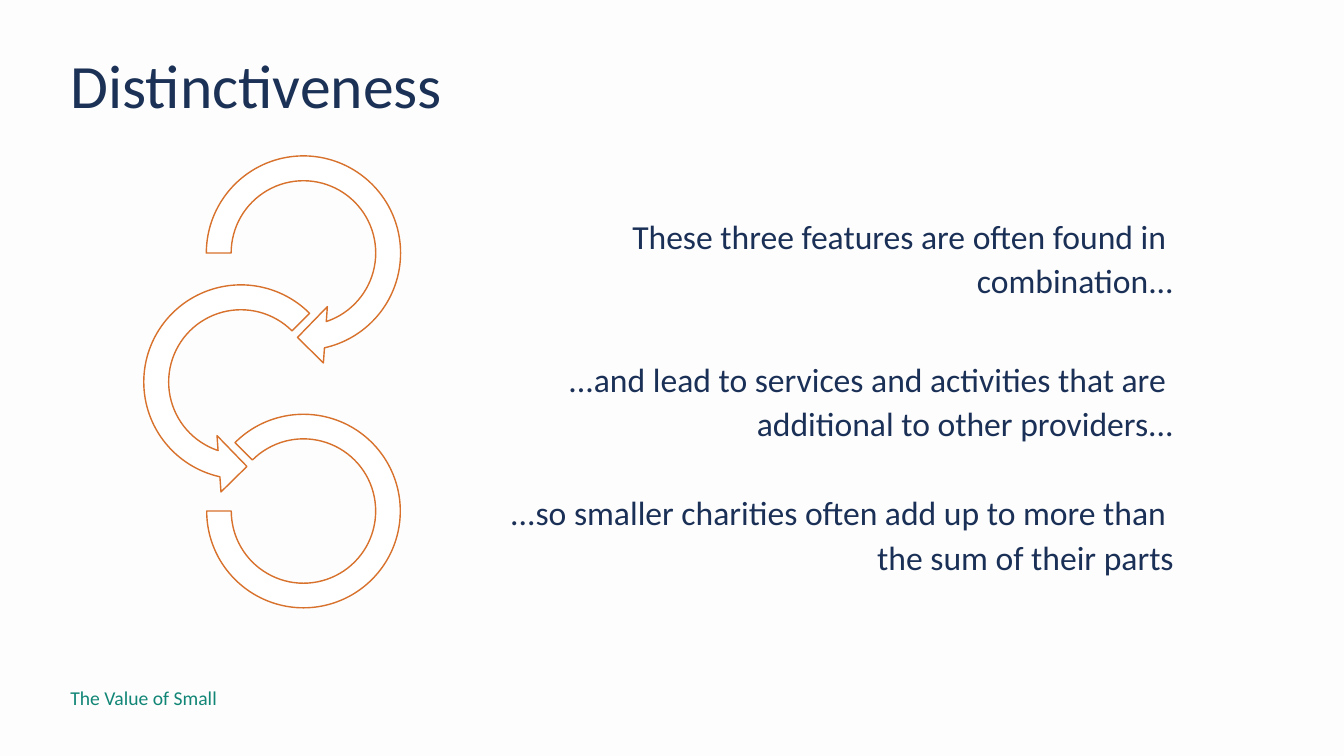
import pptx
import pptx.util
import pptx.oxml
import pptx.oxml.ns
from pptx.dml.color import RGBColor
from pptx.enum.shapes import MSO_SHAPE
from pptx.enum.text import PP_ALIGN
from pptx.util import Inches, Pt

NAVY = RGBColor(0x1C, 0x31, 0x56)
BODY_NAVY = RGBColor(0x1B, 0x30, 0x56)
GREEN = RGBColor(0x12, 0x86, 0x76)
ORANGE = RGBColor(0xD7, 0x71, 0x2C)
WHITE = RGBColor(0xFF, 0xFF, 0xFF)
GREY = RGBColor(0xDB, 0xDB, 0xDB)

STATEMENTS = [
    "These three features are often found in \vcombination...",
    "...and lead to services and activities that are \vadditional to other providers...",
    "...so smaller charities often add up to more than \vthe sum of their parts",
]
STATEMENT_GAPS = [0, 39, 32]

# preset, left, top, size, adjustments
CHAIN = [
    (MSO_SHAPE.CIRCULAR_ARROW, 1.89, 1.39, 2.24, (0.11, 11.423, 45, 108, 0.125)),
    (MSO_SHAPE.LEFT_CIRCULAR_ARROW, 1.27, 2.67, 2.24, (0.11, 11.423, 63, 189, 0.125)),
    (MSO_SHAPE.BLOCK_ARC, 2.05, 4.11, 1.92, (135, 108, 0.127)),
]


def add_text(slide, paragraphs, left, top, width, height, *, size, color,
             align=PP_ALIGN.LEFT, line_spacing=0.9, gaps=(0,)):
    """Add a text box; gaps holds the points before each paragraph."""
    frame = slide.shapes.add_textbox(
        Inches(left), Inches(top), Inches(width), Inches(height)).text_frame
    frame.word_wrap = True
    for index, (text, gap) in enumerate(zip(paragraphs, gaps)):
        paragraph = frame.add_paragraph() if index else frame.paragraphs[0]
        paragraph.text = text
        paragraph.alignment = align
        paragraph.line_spacing = line_spacing
        paragraph.space_before = Pt(gap)
        paragraph.font.name = "Calibri"
        paragraph.font.size = Pt(size)
        paragraph.font.color.rgb = color


def add_tint(slide, width, height):
    """Cover the slide with a 5% grey wash."""
    tint = slide.shapes.add_shape(MSO_SHAPE.RECTANGLE, 0, 0, width, height)
    tint.shadow.inherit = False
    tint.line.fill.background()
    tint.fill.solid()
    tint.fill.fore_color.rgb = GREY
    grey = tint.fill._xPr.find(".//" + pptx.oxml.ns.qn("a:srgbClr"))
    alpha = pptx.oxml.parse_xml(
        f'<a:alpha {pptx.oxml.ns.nsdecls("a")} val="5000"/>')
    grey.append(alpha)


def add_chain(slide):
    chain = slide.shapes.add_group_shape()
    for preset, left, top, size, adjustments in CHAIN:
        ring = chain.shapes.add_shape(
            preset, Inches(left), Inches(top), Inches(size), Inches(size))
        for index, value in enumerate(adjustments):
            ring.adjustments[index] = value
        ring.shadow.inherit = False
        ring.fill.solid()
        ring.fill.fore_color.rgb = WHITE
        ring.line.color.rgb = ORANGE
        ring.line.width = Pt(1)


def main():
    deck = pptx.Presentation()
    deck.slide_width = Inches(13.33)
    deck.slide_height = Inches(7.5)
    slide = deck.slides.add_slide(deck.slide_layouts[6])

    add_tint(slide, deck.slide_width, deck.slide_height)
    add_text(slide, ["Distinctiveness"], 0.6, 0.5, 6.46, 0.72, size=44, color=NAVY)
    add_text(slide, ["The Value of Small"], 0.6, 6.78, 4.86, 0.27, size=14, color=GREEN)
    add_text(slide, STATEMENTS, 2.92, 2.05, 8.82, 4.37, size=24, color=BODY_NAVY,
             align=PP_ALIGN.RIGHT, line_spacing=1.1, gaps=STATEMENT_GAPS)
    add_chain(slide)
    deck.save("out.pptx")


if __name__ == "__main__":
    main()
